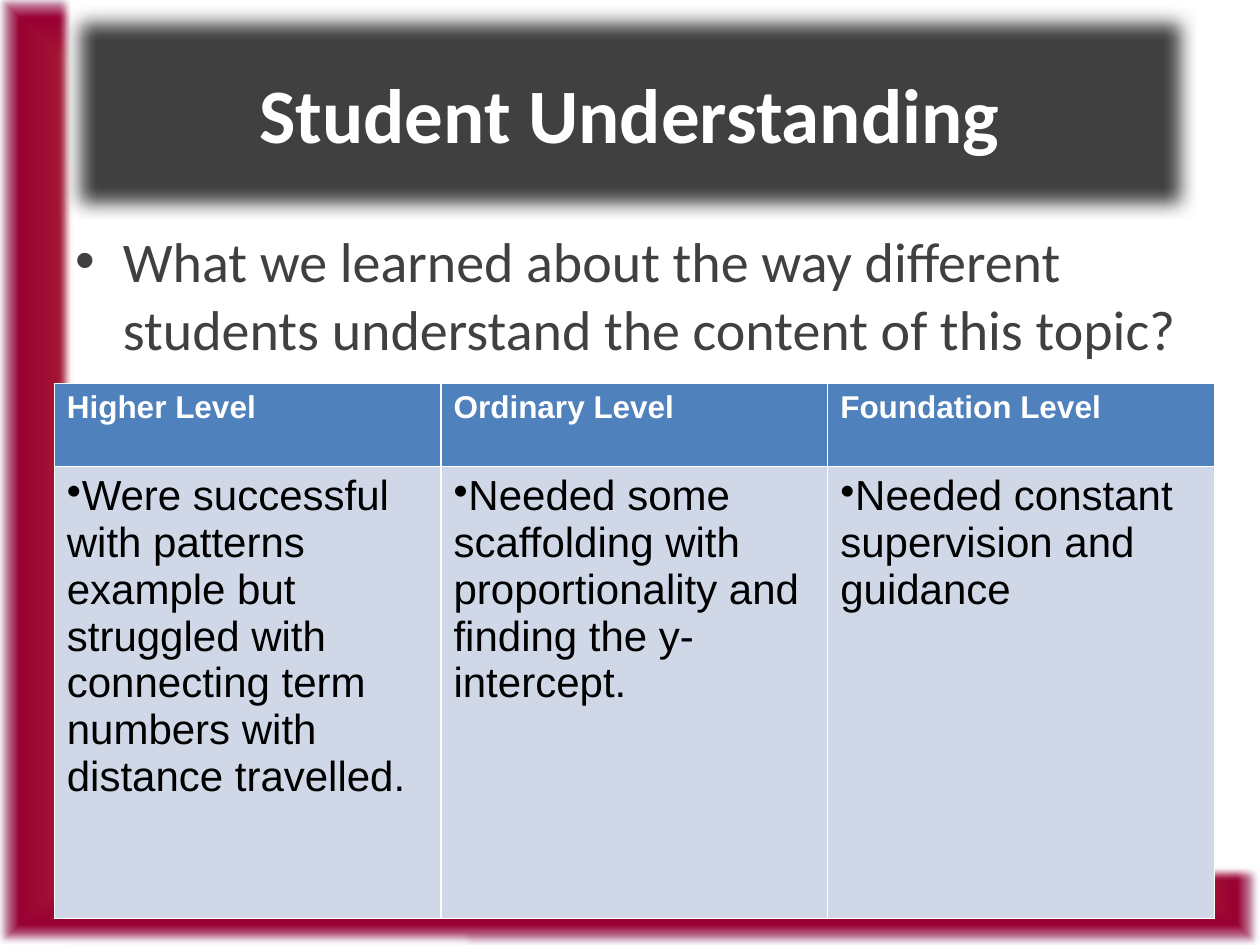
from dataclasses import dataclass

from lxml import etree
from pptx import Presentation
from pptx.dml.color import RGBColor
from pptx.enum import text
from pptx.oxml import ns
from pptx.util import Pt


@dataclass(frozen=True)
class Theme:
    """Colours, fonts and type sizes of the slide."""
    white: str = "FFFFFF"
    black: str = "000000"
    dark: str = "404040"
    blue: str = "4F81BD"
    pale: str = "D0D8E8"
    glow: tuple = ((19, "FDCC33"), (95, "990033"), (100, "E1E8F5"))
    main: str = "Calibri"
    grid: str = "Arial"
    title: int = 44
    body: int = 32
    head: int = 18
    cell: int = 24


THEME = Theme()
LEVELS = {
    "Higher Level": "Were successful with patterns example but struggled "
                    "with connecting term numbers with distance travelled.",
    "Ordinary Level": "Needed some scaffolding with proportionality and "
                      "finding the y-intercept.",
    "Foundation Level": "Needed constant supervision and guidance",
}


def add(node, tag, **attrs):
    """Append a drawing element to a node and return it."""
    return etree.SubElement(node, ns.qn(tag), attrs)


def paint(item, tint):
    """Fill a shape or cell with one colour."""
    item.fill.solid()
    item.fill.fore_color.rgb = RGBColor.from_string(tint)


def style(para, face, size, tint, bold=False):
    """Set the font of a paragraph."""
    font = para.font
    font.name, font.size, font.bold = face, Pt(size), bold
    font.color.rgb = RGBColor.from_string(tint)


def place(shape, box):
    """Move a shape into a box given in points."""
    shape.left, shape.top, shape.width, shape.height = map(Pt, box)


def soften(shape, size):
    """Give a shape soft edges in place of a shadow."""
    shape.shadow.inherit = False
    effects = shape._element.spPr.find(ns.qn("a:effectLst"))
    add(effects, "a:softEdge", rad=str(Pt(size)))


def add_frame(slide, box):
    """Draw the glowing corner frame behind everything else."""
    x, y, w, h = box
    right, base = x + w, y + h
    pen = slide.shapes.build_freeform(x, y, scale=Pt(1))
    pen.add_line_segments([
        (x + 43, y), (x + 44.5, base - 45.5), (right, base - 48),
        (right, base - 2), (x + 1, base - 4)])
    frame = pen.convert_to_shape()
    frame.line.fill.background()
    frame.fill.background()
    soften(frame, 5)
    props = frame._element.spPr
    grad = etree.Element(ns.qn("a:gradFill"), rotWithShape="1")
    stops = add(grad, "a:gsLst")
    for spot, tint in THEME.glow:
        stop = add(stops, "a:gs", pos=str(spot * 1000))
        add(stop, "a:srgbClr", val=tint)
    way = add(grad, "a:path", path="shape")
    add(way, "a:fillToRect", l="50000", t="50000", r="50000", b="50000")
    props.replace(props.find(ns.qn("a:noFill")), grad)
    frame._element.getparent().insert(2, frame._element)


def add_title(slide, box):
    """Set the title on its soft dark banner."""
    title = slide.shapes.title
    place(title, box)
    paint(title, THEME.dark)
    soften(title, 10)
    frame = title.text_frame
    frame.text = "Student Understanding"
    frame.vertical_anchor = text.MSO_ANCHOR.MIDDLE
    para = frame.paragraphs[0]
    para.alignment = text.PP_ALIGN.CENTER
    style(para, THEME.main, THEME.title, THEME.white, True)


def add_body(slide, box):
    """Set the bulleted question."""
    body = slide.placeholders[1]
    place(body, box)
    body.text_frame.text = ("What we learned about the way different students "
                            "understand the content of this topic?")
    style(body.text_frame.paragraphs[0], THEME.main, THEME.body, THEME.dark)


def fill_cell(cell, words, fill, size, tint, bold):
    """Write and colour one table cell."""
    cell.text = words
    paint(cell, fill)
    para = cell.text_frame.paragraphs[0]
    style(para, THEME.grid, size, tint, bold)
    return para


def add_levels(slide, box):
    """Add the table with one column for each level."""
    x, y, w, h = box
    count, top = len(LEVELS), 47.5
    table = slide.shapes.add_table(2, count, *map(Pt, box)).table
    for row, high in zip(table.rows, (top, h - top)):
        row.height = Pt(high)
    for col, (level, note) in enumerate(LEVELS.items()):
        table.columns[col].width = Pt(w / count)
        fill_cell(table.cell(0, col), level, THEME.blue,
                  THEME.head, THEME.white, True)
        para = fill_cell(table.cell(1, col), note, THEME.pale,
                         THEME.cell, THEME.black, False)
        add(para._p.get_or_add_pPr(), "a:buChar", char="•")


def main():
    """Build and save the slide."""
    deck = Presentation()
    deck.slide_width, deck.slide_height = Pt(720), Pt(540)
    slide = deck.slides.add_slide(deck.slide_layouts[1])
    add_frame(slide, (-2, -3, 723, 547))
    add_title(slide, (36, 3.75, 648, 121.5))
    add_body(slide, (36, 126, 648, 356.25))
    add_levels(slide, (31, 219, 663, 306))
    deck.save("out.pptx")


if __name__ == "__main__":
    main()
